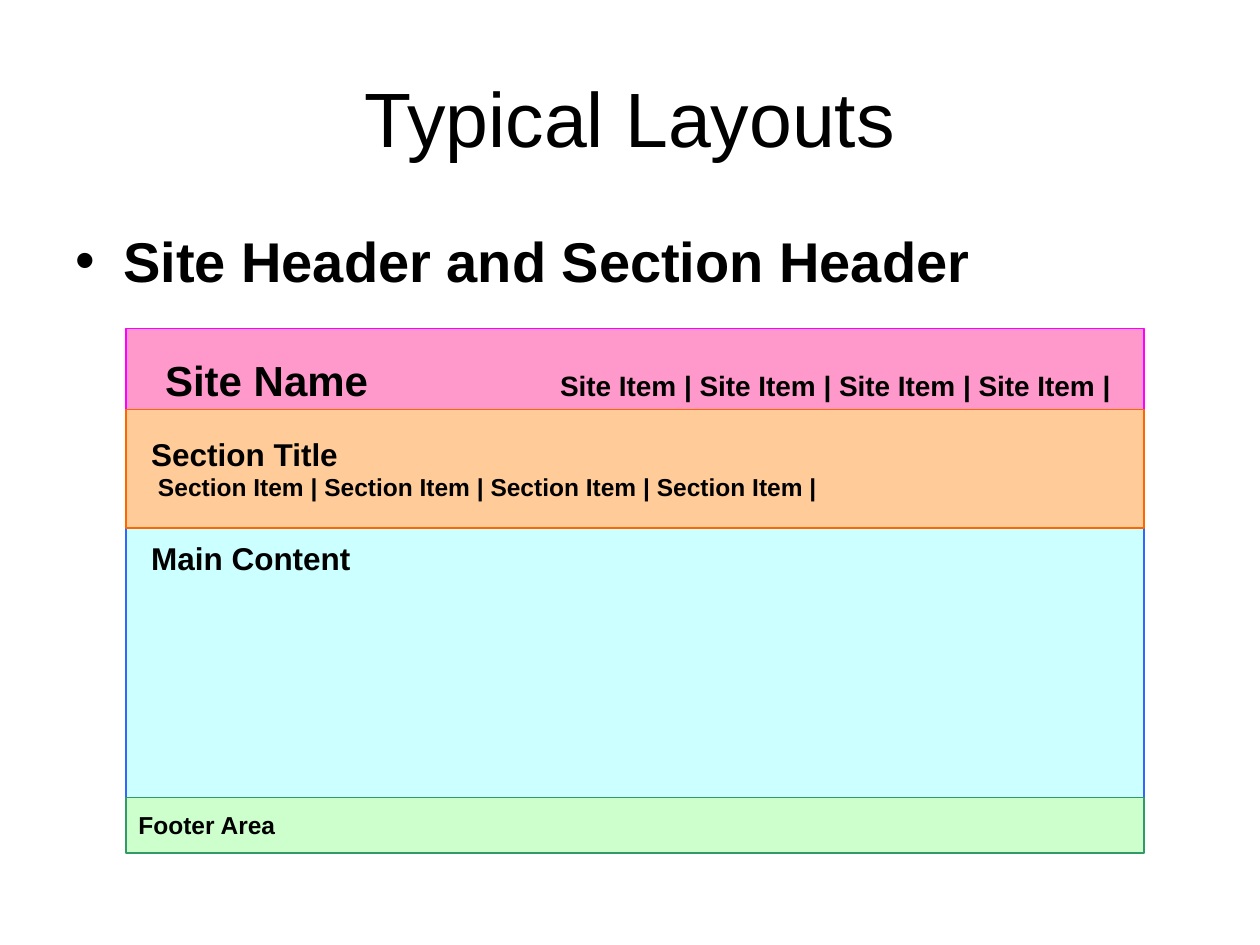
from dataclasses import dataclass

from lxml import etree
from pptx import Presentation
from pptx.dml.color import RGBColor
from pptx.enum.shapes import MSO_SHAPE
from pptx.enum.text import MSO_ANCHOR, PP_ALIGN
from pptx.oxml.ns import qn
from pptx.util import Inches, Pt

RECTANGLE = MSO_SHAPE.RECTANGLE
TOP, MIDDLE = MSO_ANCHOR.TOP, MSO_ANCHOR.MIDDLE
LEFT, CENTER = PP_ALIGN.LEFT, PP_ALIGN.CENTER


@dataclass(frozen=True)
class Theme:
    font: str = "Arial"
    text: str = "000000"
    title: int = 44
    bullet: int = 32
    site: int = 24
    section: int = 18
    site_item: int = 16
    small: int = 14
    line: float = 0.75
    pink: tuple = ("FF99CC", "FF00FF")
    cyan: tuple = ("CCFFFF", "3366FF")
    green: tuple = ("CCFFCC", "339966")
    orange: tuple = ("FFCC99", "FF6600")


THEME = Theme()


@dataclass(frozen=True)
class Piece:
    text: str
    size: int
    bold: bool = True
    new_line: bool = False


@dataclass(frozen=True)
class Band:
    top: float
    height: float
    colors: tuple
    pieces: tuple
    inset: float = 0.2
    left_inset: float = 0.2
    right_tab: float = 0


BAND_LEFT, BAND_WIDTH = 1, 8.08
ITEM_COUNT = 4

# The section header comes last, as it overlaps its neighbours.
BANDS = (
    Band(2.61, 0.81, THEME.pink,
         (Piece("Site Name", THEME.site),
          Piece("\t" + " ".join(["Site Item |"] * ITEM_COUNT), THEME.site_item)),
         left_inset=0.31, right_tab=7.51),
    Band(4.08, 2.52, THEME.cyan, (Piece("Main Content", THEME.section),)),
    Band(6.33, 0.44, THEME.green, (Piece("Footer Area", THEME.small),),
         inset=0.1, left_inset=0.1),
    Band(3.25, 0.94, THEME.orange,
         (Piece("Section Title", THEME.section),
          Piece(" Section Item |" * ITEM_COUNT, THEME.small, new_line=True))),
)


def write_pieces(frame, pieces: tuple, anchor=TOP, align=LEFT, space_before: float = 0):
    """Fill the frame's first paragraph and return that paragraph."""
    frame.word_wrap = True
    frame.vertical_anchor = anchor
    paragraph = frame.paragraphs[0]
    paragraph.alignment = align
    paragraph.space_before = Pt(space_before)
    for piece in pieces:
        if piece.new_line:
            paragraph.add_line_break()
        run = paragraph.add_run()
        run.text = piece.text
        formats = {"name": THEME.font, "size": Pt(piece.size), "bold": piece.bold}
        for attribute, value in formats.items():
            setattr(run.font, attribute, value)
        run.font.color.rgb = RGBColor.from_string(THEME.text)
    return paragraph


def draw_title(slide, text: str) -> None:
    box = slide.shapes.add_textbox(Inches(0.5), Inches(0.3), Inches(9), Inches(1.25))
    write_pieces(box.text_frame, (Piece(text, THEME.title, bold=False),), MIDDLE, CENTER)


def draw_bullet(slide, text: str) -> None:
    box = slide.shapes.add_textbox(Inches(0.5), Inches(1.75), Inches(9), Inches(4.95))
    paragraph = write_pieces(box.text_frame, (Piece(text, THEME.bullet),), space_before=3)
    properties = paragraph._p.get_or_add_pPr()
    indent = Inches(0.38)
    properties.set("marL", str(indent))
    properties.set("indent", str(-indent))
    etree.SubElement(properties, qn("a:buFont"), typeface=THEME.font)
    etree.SubElement(properties, qn("a:buChar"), char="•")


def draw_band(slide, band: Band) -> None:
    shape = slide.shapes.add_shape(RECTANGLE, Inches(BAND_LEFT), Inches(band.top),
                                   Inches(BAND_WIDTH), Inches(band.height))
    shape.shadow.inherit = False
    fill, line = map(RGBColor.from_string, band.colors)
    shape.fill.solid()
    shape.fill.fore_color.rgb = fill
    shape.line.color.rgb = line
    shape.line.width = Pt(THEME.line)

    frame = shape.text_frame
    insets = {"margin_left": band.left_inset, "margin_top": band.inset,
              "margin_right": band.inset, "margin_bottom": band.inset}
    for attribute, value in insets.items():
        setattr(frame, attribute, Inches(value))
    paragraph = write_pieces(frame, band.pieces, space_before=2)
    if band.right_tab:
        tabs = etree.SubElement(paragraph._p.get_or_add_pPr(), qn("a:tabLst"))
        etree.SubElement(tabs, qn("a:tab"), pos=str(Inches(band.right_tab)), algn="r")


def main() -> None:
    presentation = Presentation()
    presentation.slide_width = Inches(10)
    presentation.slide_height = Inches(7.5)
    slide = presentation.slides.add_slide(presentation.slide_layouts[6])
    draw_title(slide, "Typical Layouts")
    draw_bullet(slide, "Site Header and Section Header")
    for band in BANDS:
        draw_band(slide, band)
    presentation.save("out.pptx")


if __name__ == "__main__":
    main()
